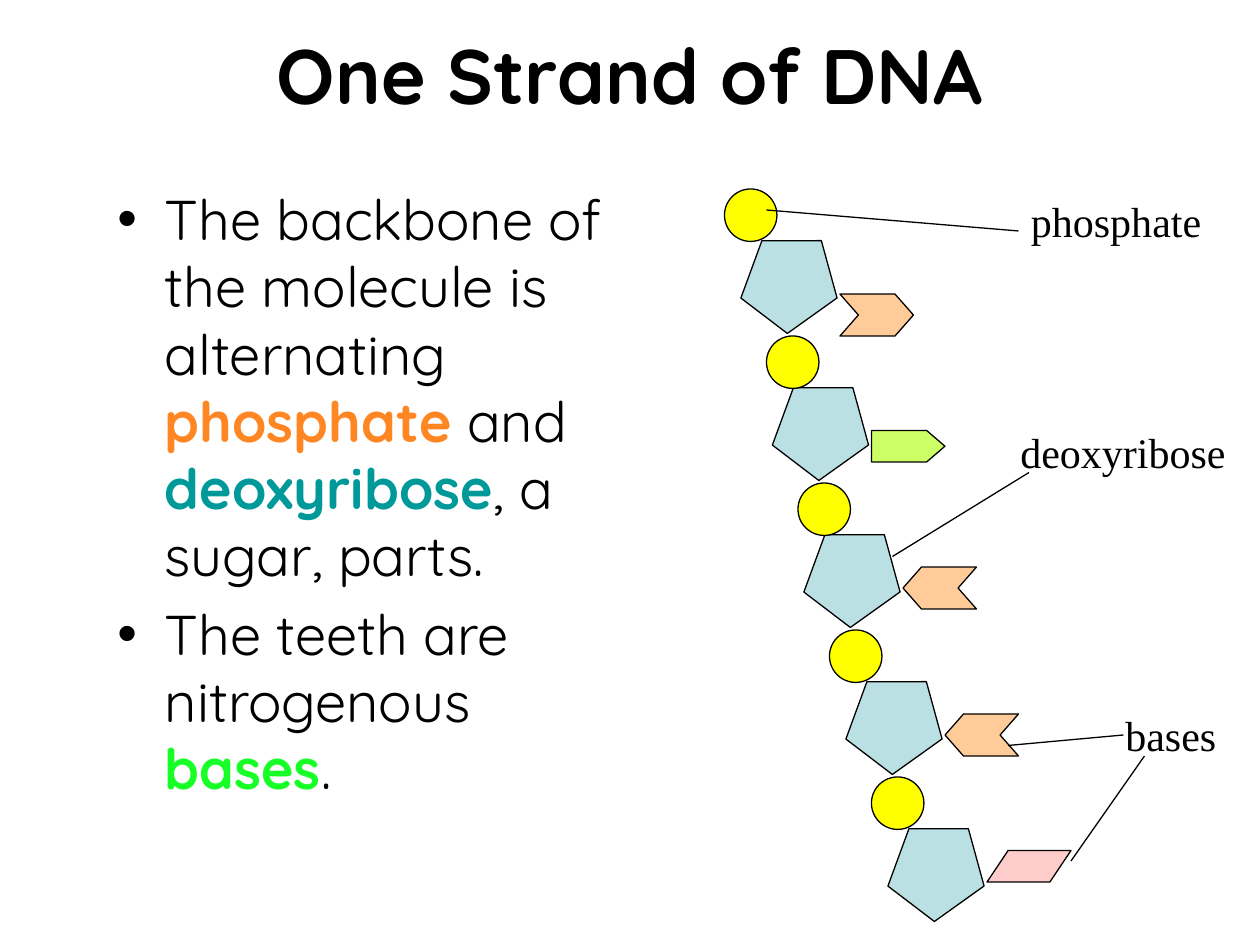
from dataclasses import dataclass

from lxml.etree import SubElement
from pptx import Presentation
from pptx.dml.color import RGBColor
from pptx.enum.shapes import MSO_CONNECTOR, MSO_SHAPE
from pptx.enum.text import MSO_ANCHOR, MSO_AUTO_SIZE, PP_ALIGN
from pptx.oxml.ns import qn
from pptx.util import Emu, Pt

EMU_PER_PX = 7620


@dataclass(frozen=True)
class Theme:
    """Colours, fonts and sizes of the slide."""
    ink: str = "000000"
    phosphate: str = "FFFF00"
    sugar: str = "BBE0E3"
    orange_base: str = "FFCC99"
    green_base: str = "CCFF66"
    pink_base: str = "FFCCCC"
    phosphate_word: str = "FF8723"
    sugar_word: str = "009999"
    base_word: str = "17FF26"
    heading_font: str = "Quicksand"
    label_font: str = "Times New Roman"
    bullet_font: str = "Arial"
    title_size: int = 44
    body_size: int = 32
    label_size: int = 24
    line_width: float = 0.75


@dataclass(frozen=True)
class Base:
    """Form of one nitrogenous base."""
    preset: MSO_SHAPE
    fill: str
    width: int
    height: int
    adjustment: float
    rotation: int = 0


THEME = Theme()
RIGHT_CHEVRON = Base(MSO_SHAPE.CHEVRON, THEME.orange_base, 70, 40, 0.44)
LEFT_CHEVRON = Base(MSO_SHAPE.CHEVRON, THEME.orange_base, 70, 40, 0.44, 180)
GREEN_TAG = Base(MSO_SHAPE.PENTAGON, THEME.green_base, 70, 30, 0.58)
PINK_SLANT = Base(MSO_SHAPE.PARALLELOGRAM, THEME.pink_base, 80, 30, 0.67)

STRAND_TOP, UNIT_STEP = 180, 140
PHOSPHATE_SIZE, SUGAR_SIZE, SUGAR_DROP, SUGAR_TURN = 50, 90, 40, 37.3
UNITS = [
    (690, 710, 100, RIGHT_CHEVRON),
    (730, 740, 90, GREEN_TAG),
    (760, 770, 80, LEFT_CHEVRON),
    (790, 810, 80, LEFT_CHEVRON),
    (830, 850, 70, PINK_SLANT),
]
LABELS = [
    ("phosphate", (970, 180, 190, 60)),
    ("deoxyribose", (960, 400, 230, 60)),
    ("bases", (1060, 670, 130, 60)),
]
POINTERS = [
    ((730, 200), (970, 220)),
    ((850, 530), (980, 450)),
    ((1020, 820), (1090, 720)),
    ((960, 710), (1070, 700)),
]
BULLETS = [
    [("The backbone of the molecule is alternating ", None),
     ("phosphate", THEME.phosphate_word), (" and ", None),
     ("deoxyribose", THEME.sugar_word), (", a sugar, parts.", None)],
    [("The teeth are nitrogenous ", None), ("bases", THEME.base_word), (".", None)],
]


def px(*lengths):
    """Turn pixel lengths into EMU."""
    return [Emu(length * EMU_PER_PX) for length in lengths]


def set_font(font, name, size, bold=False):
    """Format a font in the ink colour."""
    font.name, font.size, font.bold = name, Pt(size), bold
    font.color.rgb = RGBColor.from_string(THEME.ink)


def set_line(line):
    """Give an outline or pointer the thin ink line."""
    line.color.rgb = RGBColor.from_string(THEME.ink)
    line.width = Pt(THEME.line_width)


def set_title(slide, text, box):
    """Place and format the title placeholder."""
    title = slide.shapes.title
    title.left, title.top, title.width, title.height = px(*box)
    frame = title.text_frame
    frame.text = text
    frame.vertical_anchor = MSO_ANCHOR.MIDDLE
    frame.paragraphs[0].alignment = PP_ALIGN.CENTER
    set_font(frame.paragraphs[0].font, THEME.heading_font, THEME.title_size, True)


def add_bullets(slide, bullets, box):
    """Add the bulleted text with its coloured key words."""
    frame = slide.shapes.add_textbox(*px(*box)).text_frame
    frame.word_wrap = True
    for index, runs in enumerate(bullets):
        paragraph = frame.add_paragraph() if index else frame.paragraphs[0]
        properties = paragraph._p.get_or_add_pPr()
        indent = px(45)[0]
        properties.set("marL", str(indent))
        properties.set("indent", str(-indent))
        SubElement(properties, qn("a:buFont"), typeface=THEME.bullet_font)
        SubElement(properties, qn("a:buChar"), char="•")
        paragraph.space_before = Pt(0.2 * THEME.body_size if index else 0)
        set_font(paragraph.font, THEME.heading_font, THEME.body_size)
        for text, color in runs:
            run = paragraph.add_run()
            run.text = text
            if color:
                run.font.bold = True
                run.font.color.rgb = RGBColor.from_string(color)


def add_part(slide, preset, box, fill, rotation=0):
    """Add one filled part of the strand."""
    shape = slide.shapes.add_shape(preset, *px(*box))
    shape.shadow.inherit = False
    shape.rotation = rotation
    shape.fill.solid()
    shape.fill.fore_color.rgb = RGBColor.from_string(fill)
    set_line(shape.line)
    return shape


def add_unit(slide, top, phosphate_left, sugar_left, base_drop, base):
    """Add a sugar, its phosphate and its base."""
    add_part(slide, MSO_SHAPE.REGULAR_PENTAGON,
             (sugar_left, top + SUGAR_DROP, SUGAR_SIZE, SUGAR_SIZE),
             THEME.sugar, SUGAR_TURN)
    add_part(slide, MSO_SHAPE.OVAL,
             (phosphate_left, top, PHOSPHATE_SIZE, PHOSPHATE_SIZE), THEME.phosphate)
    shape = add_part(slide, base.preset,
                     (sugar_left + SUGAR_SIZE, top + base_drop, base.width, base.height),
                     base.fill, base.rotation)
    shape.adjustments[0] = base.adjustment


def add_pointer(slide, start, end):
    """Add a straight line from a part to its label."""
    connector = slide.shapes.add_connector(MSO_CONNECTOR.STRAIGHT, *px(*start, *end))
    set_line(connector.line)
    SubElement(connector._element.spPr, qn("a:effectLst"))


def add_label(slide, text, box):
    """Add the name of a part."""
    frame = slide.shapes.add_textbox(*px(*box)).text_frame
    frame.word_wrap = True
    frame.auto_size = MSO_AUTO_SIZE.SHAPE_TO_FIT_TEXT
    frame.text = text
    set_font(frame.paragraphs[0].font, THEME.label_font, THEME.label_size)


def main():
    """Build and save the slide."""
    presentation = Presentation()
    presentation.slide_width, presentation.slide_height = px(1200, 900)
    slide = presentation.slides.add_slide(presentation.slide_layouts[5])
    set_title(slide, "One Strand of DNA", (90, 0, 1020, 140))
    add_bullets(slide, BULLETS, (100, 170, 510, 620))
    for index, unit in enumerate(UNITS):
        add_unit(slide, STRAND_TOP + index * UNIT_STEP, *unit)
    for start, end in POINTERS:
        add_pointer(slide, start, end)
    for text, box in LABELS:
        add_label(slide, text, box)
    presentation.save("out.pptx")


if __name__ == "__main__":
    main()
